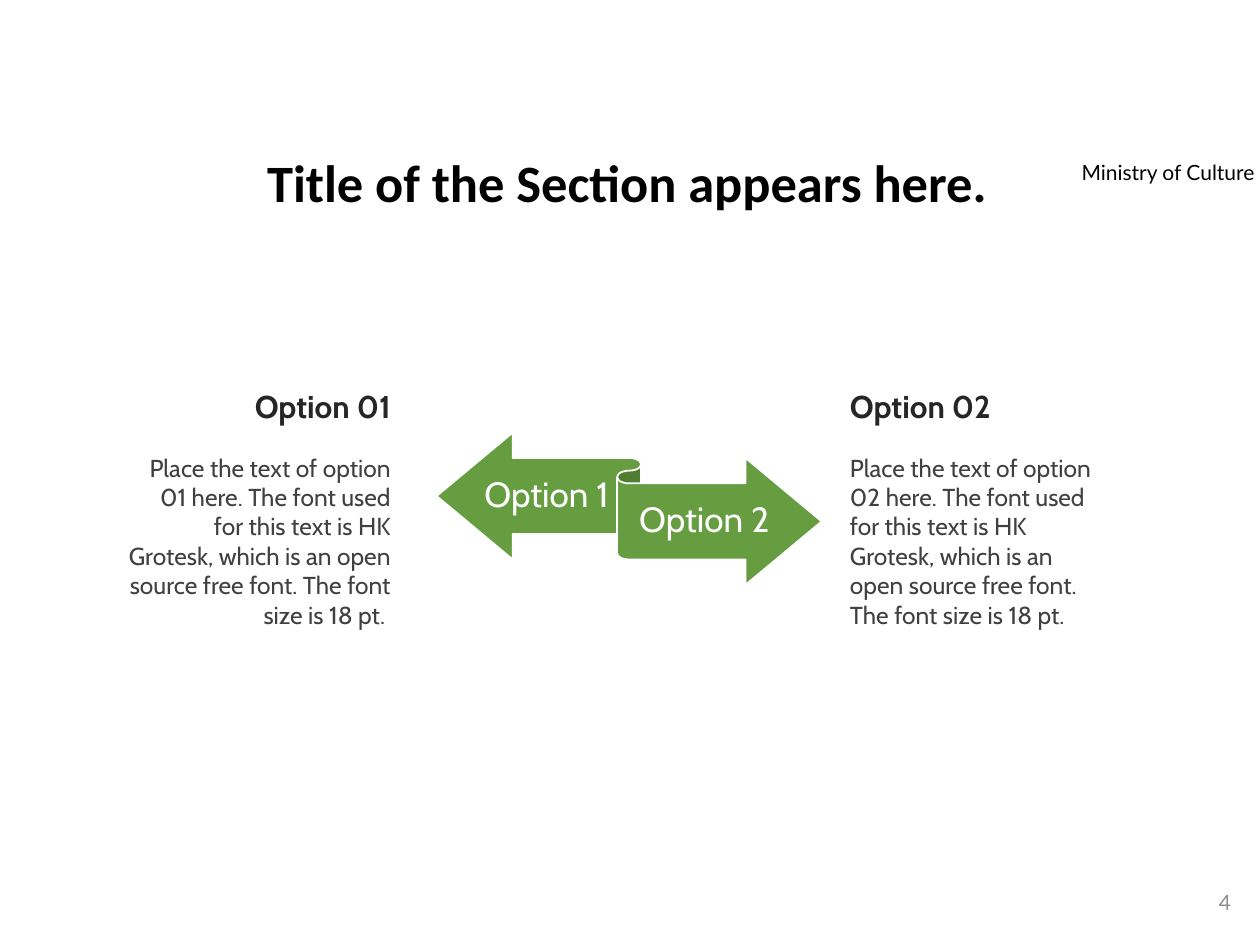
import pptx
import pptx.util
import pptx.dml.color
import pptx.enum.shapes
import pptx.enum.text

Pt = pptx.util.Pt
Align = pptx.enum.text.PP_ALIGN
Anchor = pptx.enum.text.MSO_ANCHOR


def color(value):
    return pptx.dml.color.RGBColor.from_string(value)


def write(box, text, font="Cabin", size=14, fill="000000", bold=False,
          align=Align.LEFT, anchor=Anchor.TOP, spacing=1, before=0, side=7.2, add=False):
    frame = box.text_frame
    frame.word_wrap = True
    frame.auto_size = pptx.enum.text.MSO_AUTO_SIZE.NONE
    frame.vertical_anchor = anchor
    frame.margin_left = frame.margin_right = Pt(side)
    para = frame.add_paragraph() if add else frame.paragraphs[0]
    para.alignment = align
    para.line_spacing = spacing
    para.space_before = Pt(before)
    span = para.add_run()
    span.text = text
    span.font.name = font
    span.font.size = Pt(size)
    span.font.bold = bold
    span.font.color.rgb = color(fill)


deck = pptx.Presentation()
deck.slide_width, deck.slide_height = Pt(720), Pt(540)
page = deck.slides.add_slide(deck.slide_layouts[5])

# Title
title = page.shapes.title
title.left, title.top, title.width, title.height = Pt(91), Pt(86.4), Pt(535), Pt(57)
write(title, "Title of the Section appears here.", font="Calibri", size=30,
      bold=True, align=Align.CENTER, spacing=0.9)

# Ministry name
ministry = page.shapes.add_textbox(Pt(589), Pt(87.8), Pt(157), Pt(21.8))
write(ministry, "Ministry of Culture", font="Lato", size=12, align=Align.CENTER)

# Two-way ribbon
ribbon = page.shapes.add_shape(pptx.enum.shapes.MSO_SHAPE.LEFT_RIGHT_RIBBON,
                               Pt(249.5), Pt(247.2), Pt(220), Pt(87))
ribbon.shadow.inherit = False
ribbon.fill.solid()
ribbon.fill.fore_color.rgb = color("669D40")
ribbon.line.color.rgb = color("FFFFFF")
ribbon.line.width = Pt(1)

# Ribbon labels
for label, left, top, width in [("Option 1", 275.8, 262, 73), ("Option 2", 359.3, 276.5, 86.4)]:
    box = page.shapes.add_textbox(Pt(left), Pt(top), Pt(width), Pt(43))
    write(box, label, size=20, fill="FFFFFF", align=Align.CENTER,
          anchor=Anchor.MIDDLE, spacing=0.9, side=0)

# Option descriptions on either side
options = [
    ("Option 01", "Place the text of option 01 here. The font used for this text is HK Grotesk, "
     "which is an open source free font. The font size is 18 pt. ", 66.4, 164, Align.RIGHT),
    ("Option 02", "Place the text of option 02 here. The font used for this text is HK Grotesk, "
     "which is an open source free font. The font size is 18 pt.", 478.6, 159, Align.LEFT),
]
for heading, body, left, width, align in options:
    box = page.shapes.add_textbox(Pt(left), Pt(217.5), Pt(width), Pt(163.5))
    write(box, heading, size=18, fill="262626", bold=True, align=align)
    write(box, body, fill="404040", align=align, before=16, add=True)

# Slide number
number = page.shapes.add_textbox(Pt(548.6), Pt(501), Pt(162), Pt(29))
write(number, "4", font="Lato", size=12, fill="8C8C8C", align=Align.RIGHT, anchor=Anchor.MIDDLE)

deck.save("out.pptx")
